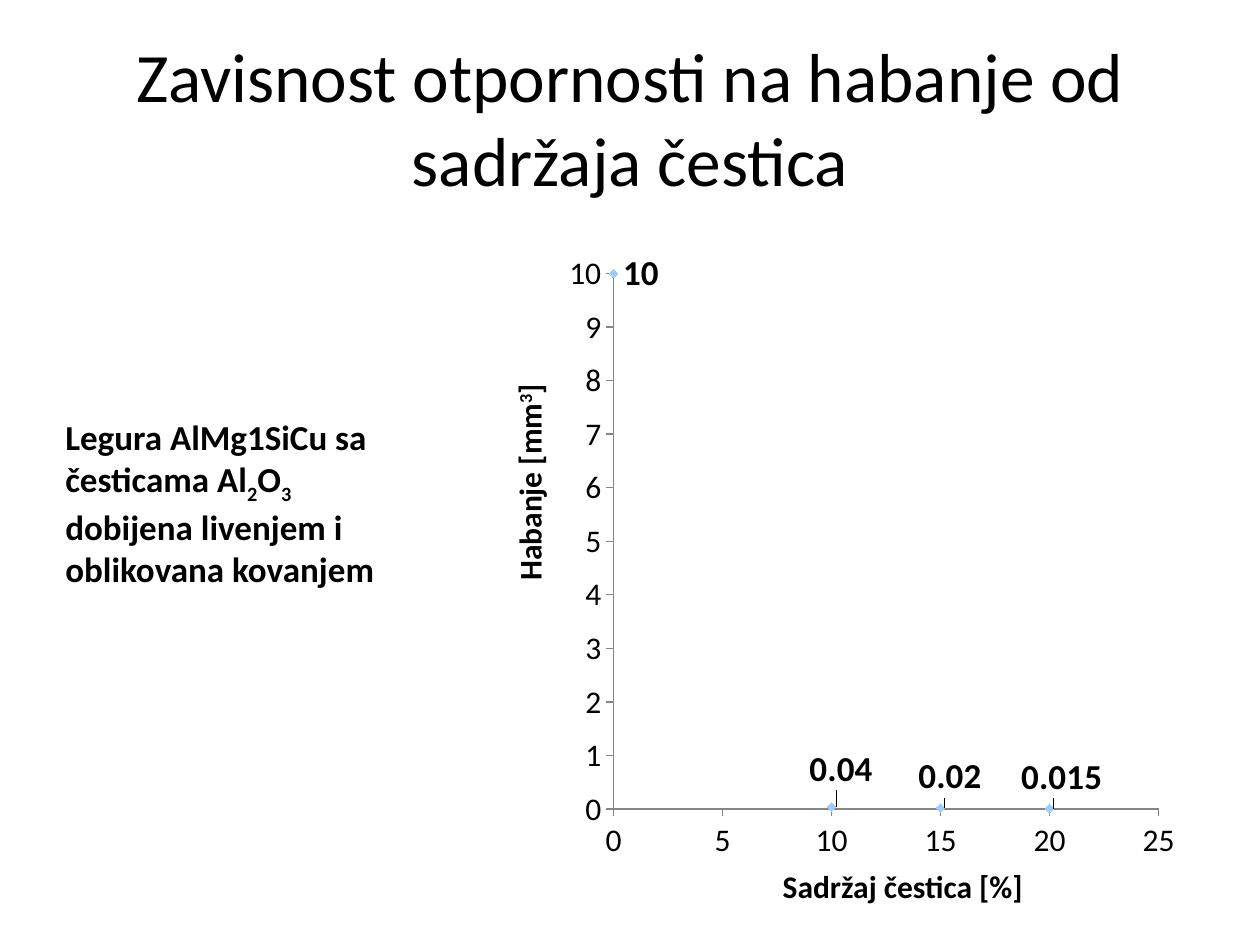
from lxml import etree
from pptx import Presentation
from pptx.chart.data import XyChartData
from pptx.dml.color import RGBColor
from pptx.enum.chart import XL_CHART_TYPE, XL_LABEL_POSITION, XL_MARKER_STYLE, XL_TICK_MARK
from pptx.enum.text import MSO_ANCHOR, MSO_AUTO_SIZE, PP_ALIGN
from pptx.oxml.ns import qn
from pptx.util import Inches, Pt

LEFT, CENTER = PP_ALIGN.LEFT, PP_ALIGN.CENTER
TOP, MIDDLE = MSO_ANCHOR.TOP, MSO_ANCHOR.MIDDLE
GROW = MSO_AUTO_SIZE.SHAPE_TO_FIT_TEXT
SCATTER = XL_CHART_TYPE.XY_SCATTER
DIAMOND = XL_MARKER_STYLE.DIAMOND
OUTSIDE = XL_TICK_MARK.OUTSIDE
RIGHT = XL_LABEL_POSITION.RIGHT

COLORS = {"text": "000000", "axis": "868686", "marker": "99CCFF"}
FONT = "Calibri"
SUB, SUPER = -25000, 30000


def manual_layout(**settings):
    layout = etree.Element(qn("c:layout"))
    manual = etree.SubElement(layout, qn("c:manualLayout"))
    for tag, value in settings.items():
        etree.SubElement(manual, qn(f"c:{tag}")).set("val", str(value))
    return layout


class SlideBuilder:
    def __init__(self, presentation):
        self.width = presentation.slide_width
        self.height = presentation.slide_height
        self.slide = presentation.slides.add_slide(presentation.slide_layouts[6])

    def area(self, left, top, width, height):
        return (int(left * self.width), int(top * self.height),
                int(width * self.width), int(height * self.height))

    def style(self, font, size, bold=False):
        font.name = FONT
        font.size = Pt(size)
        font.bold = bold
        font.color.rgb = RGBColor.from_string(COLORS["text"])

    def text(self, place, runs, size, bold=True, align=LEFT, anchor=TOP, vertical=False):
        frame = self.slide.shapes.add_textbox(*self.area(*place)).text_frame
        frame.word_wrap = True
        frame.vertical_anchor = anchor
        if anchor == TOP:
            frame.auto_size = GROW
        if vertical:
            frame._txBody.bodyPr.set("vert", "vert270")
        paragraph = frame.paragraphs[0]
        paragraph.alignment = align
        for words, baseline in runs:
            run = paragraph.add_run()
            run.text = words
            self.style(run.font, size, bold)
            if baseline:
                run.font._element.set("baseline", str(baseline))

    def axis(self, axis, maximum, step):
        axis.minimum_scale, axis.maximum_scale, axis.major_unit = 0, maximum, step
        axis.has_major_gridlines = False
        axis.has_title = False
        axis.major_tick_mark = OUTSIDE
        axis.format.line.color.rgb = RGBColor.from_string(COLORS["axis"])
        axis.format.line.width = Pt(0.75)
        self.style(axis.tick_labels.font, 18)

    def scatter(self, place, points, label_shifts):
        data = XyChartData()
        wear = data.add_series("Habanje")
        for content, loss in points:
            wear.add_data_point(content, loss)
        chart = self.slide.shapes.add_chart(SCATTER, *self.area(*place), data).chart
        chart.has_legend = False
        chart.has_title = False
        self.style(chart.font, 10)
        self.axis(chart.category_axis, 25, 5)
        self.axis(chart.value_axis, 10, 1)

        plot = chart.plots[0]
        plot.vary_by_categories = False
        series = plot.series[0]
        series.format.line.fill.background()
        series.marker.style = DIAMOND
        series.marker.size = 5
        marker_color = RGBColor.from_string(COLORS["marker"])
        series.marker.format.fill.solid()
        series.marker.format.fill.fore_color.rgb = marker_color
        series.marker.format.line.color.rgb = marker_color
        for index in range(len(points)):
            label = series.points[index].data_label
            self.style(label.font, 20, True)
            label.position = RIGHT
        for label, (x, y) in zip(series._element.iter(qn("c:dLbl")), label_shifts):
            if x or y:
                label.find(qn("c:idx")).addnext(manual_layout(x=x, y=y))
        for smooth in series._element.iter(qn("c:smooth")):
            smooth.set("val", "0")

        area = chart._chartSpace.chart.plotArea
        for old in area.findall(qn("c:layout")):
            area.remove(old)
        area.insert(0, manual_layout(layoutTarget="inner", xMode="edge", yMode="edge",
                                     x=0.09, y=0.05, w=0.865, h=0.85))


def main():
    presentation = Presentation()
    presentation.slide_width, presentation.slide_height = Inches(10), Inches(7.5)
    builder = SlideBuilder(presentation)
    builder.text((0.05, 0.04, 0.9, 0.167),
                 [("Zavisnost otpornosti na habanje od sadržaja čestica", 0)],
                 39.6, bold=False, align=CENTER, anchor=MIDDLE)
    builder.text((0.042, 0.433, 0.267, 0.193),
                 [("Legura AlMg1SiCu sa česticama Al", 0), ("2", SUB), ("O", 0), ("3", SUB),
                  (" dobijena livenjem i oblikovana kovanjem", 0)], 20)
    builder.scatter((0.442, 0.256, 0.5, 0.667),
                    [(0, 10), (10, 0.04), (15, 0.02), (20, 0.015)],
                    [(0, 0), (-0.05, -0.06), (-0.05, -0.05), (-0.06, -0.05)])
    builder.text((0.608, 0.911, 0.217, 0.053), [("Sadržaj čestica [%]", 0)], 18, align=CENTER)
    builder.text((0.4, 0.389, 0.05, 0.243),
                 [("Habanje [mm", 0), ("3", SUPER), ("]", 0)], 18, align=CENTER, vertical=True)
    presentation.save("out.pptx")


if __name__ == "__main__":
    main()
